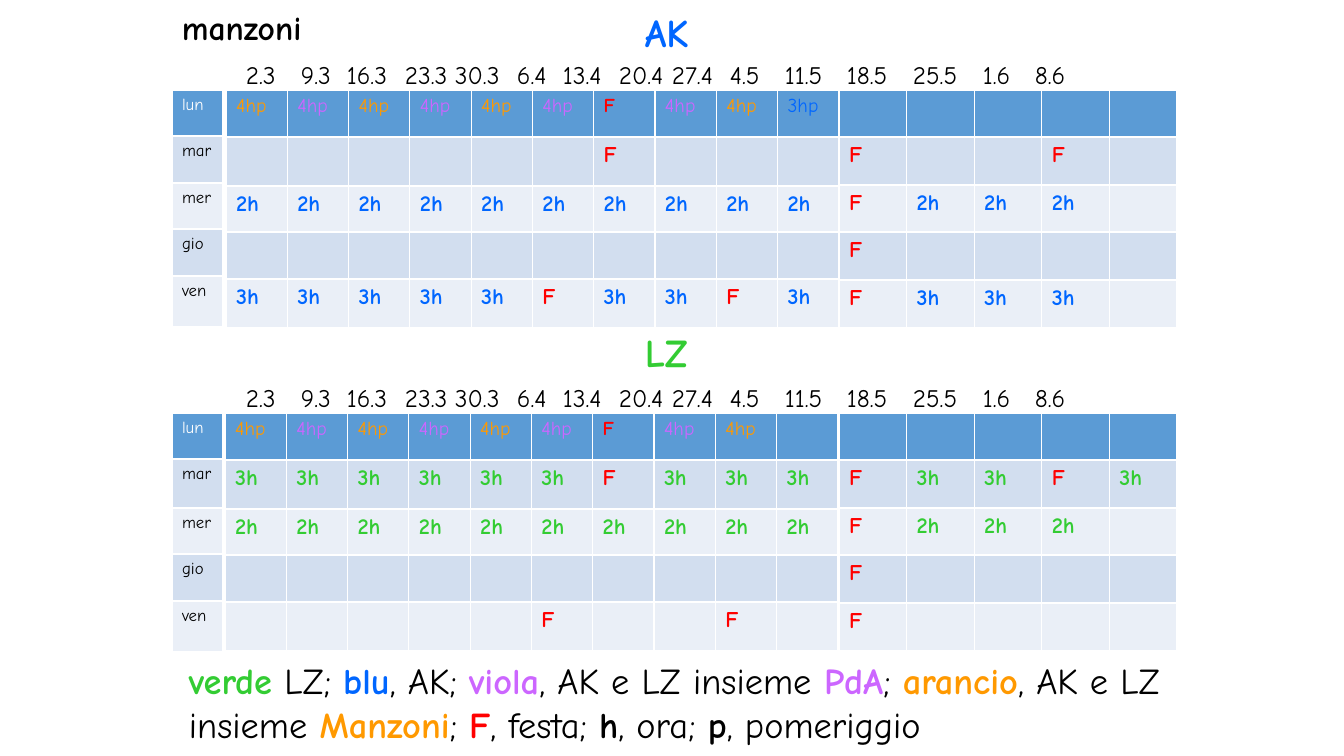
from lxml.etree import SubElement
from pptx import Presentation
from pptx.dml.color import RGBColor
from pptx.enum.text import MSO_AUTO_SIZE
from pptx.oxml.ns import qn
from pptx.util import Pt

# Content
GREEN, BLUE, VIOLET, ORANGE = "33CC33", "0066FF", "CC66FF", "FF9900"
RED, BLACK, WHITE = "FF0000", "000000", "FFFFFF"
HEADER_FILL, BAND_FILLS = "5B9BD5", ("EAEFF7", "D2DEEF")
FONT = "Comic Neue"

DAYS = ["lun", "mar", "mer", "gio", "ven"]
DATES = ["2.3", "9.3", "16.3", "23.3", "30.3", "6.4", "13.4", "20.4",
         "27.4", "4.5", "11.5", "18.5", "25.5", "1.6", "8.6"]
DATE_STOPS = [55, 101, 159, 209, 271, 317, 373, 426, 484, 539, 601, 667, 737, 789]

# Marks: M = Manzoni, P = PdA, F = holiday, "." = free; the rest are class hours
MARKS = {"M": ("4hp", ORANGE), "P": ("4hp", VIOLET), "F": ("F", RED), ".": ("", BLACK)}
CLASSES = [
    {"name": "AK", "colour": BLUE, "title_top": 3, "dates_top": 54, "top": 90,
     "grid_left": 226, "day_rows": [46, 47, 46, 47, 51],
     "hours": ["M P M P M P F P M 3hp . . . . .",
               ". . . . . . F . . . F . . F .",
               "2h 2h 2h 2h 2h 2h 2h 2h 2h 2h F 2h 2h 2h .",
               ". . . . . . . . . . F . . . .",
               "3h 3h 3h 3h 3h F 3h 3h F 3h F 3h 3h 3h ."]},
    {"name": "LZ", "colour": GREEN, "title_top": 323, "dates_top": 377, "top": 413,
     "grid_left": 225, "day_rows": [46, 49, 46, 47, 51],
     "hours": ["M P M P M P F P M . . . . . .",
               "3h 3h 3h 3h 3h 3h F 3h 3h 3h F 3h 3h F 3h",
               "2h 2h 2h 2h 2h 2h 2h 2h 2h 2h F 2h 2h 2h .",
               ". . . . . . . . . . F . . . .",
               ". . . . . F . . F . F . . . ."]},
]
SPRING_COLUMNS = 10
SPRING_ROWS, SUMMER_ROWS = [47, 49, 46, 47, 49], [47, 48, 47, 48, 48]

LEGEND = [("verde", GREEN), (" LZ; ", None), ("blu", BLUE), (", AK; ", None),
          ("viola", VIOLET), (", AK e LZ insieme ", None), ("PdA", VIOLET),
          ("; ", None), ("arancio", ORANGE), (", AK e LZ insieme ", None),
          ("Manzoni", ORANGE), ("; ", None), ("F", RED), (", festa; ", None),
          ("h", BLACK), (", ora; ", None), ("p", BLACK), (", pomeriggio", None)]


# Helpers
def px(length):
    return round(length * 914400 / 100.8)


def rgb(value):
    return RGBColor.from_string(value)


def add_run(paragraph, text, size, colour, bold=False):
    run = paragraph.add_run()
    run.text = text
    for name, value in {"name": FONT, "size": Pt(size), "bold": bold}.items():
        setattr(run.font, name, value)
    run.font.color.rgb = rgb(colour)


def add_text_box(slide, left, top, width, height, wrap=False):
    frame = slide.shapes.add_textbox(px(left), px(top), px(width), px(height)).text_frame
    frame.word_wrap = wrap
    frame.auto_size = MSO_AUTO_SIZE.SHAPE_TO_FIT_TEXT
    return frame.paragraphs[0]


def add_grid(slide, left, top, width, row_heights, cells):
    """Each cell is (text, size, colour, bold)."""
    columns = len(cells[0])
    table = slide.shapes.add_table(len(cells), columns, px(left), px(top),
                                   px(width), px(sum(row_heights))).table
    for column in table.columns:
        column.width = px(width / columns)
    for r, row in enumerate(cells):
        table.rows[r].height = px(row_heights[r])
        for c, (text, size, colour, bold) in enumerate(row):
            cell = table.cell(r, c)
            cell.fill.solid()
            cell.fill.fore_color.rgb = rgb(BAND_FILLS[r % 2] if r else HEADER_FILL)
            if text:
                add_run(cell.text_frame.paragraphs[0], text, size, colour, bold)


def add_dates(slide, top):
    paragraph = add_text_box(slide, 236, top, 938, 40, wrap=True)
    tab_list = SubElement(paragraph._p.get_or_add_pPr(), qn("a:tabLst"))
    for stop in DATE_STOPS:
        SubElement(tab_list, qn("a:tab"), pos=str(px(stop)), algn="l")
    add_run(paragraph, "\t".join(DATES), 18, BLACK)


def add_class(slide, group):
    # Hours, split into the two grids
    cells = []
    for r, line in enumerate(group["hours"]):
        marks = [MARKS.get(mark, (mark, group["colour"])) for mark in line.split()]
        cells.append([(text, 16 if r else 14, colour, r > 0 or text == "F")
                      for text, colour in marks])
    add_grid(slide, group["grid_left"], group["top"], 613, SPRING_ROWS,
             [row[:SPRING_COLUMNS] for row in cells])
    add_grid(slide, 839, group["top"], 338, SUMMER_ROWS,
             [row[SPRING_COLUMNS:] for row in cells])
    # Day names
    days = [[(day, 12, BLACK if r else WHITE, False)] for r, day in enumerate(DAYS)]
    add_grid(slide, 172, group["top"], 51, group["day_rows"], days)
    # Class name and dates
    title = add_text_box(slide, 635, group["title_top"], 72, 57)
    add_run(title, group["name"], 28, group["colour"], True)
    add_dates(slide, group["dates_top"])


def main():
    presentation = Presentation()
    presentation.slide_width, presentation.slide_height = px(1344), px(756)
    slide = presentation.slides.add_slide(presentation.slide_layouts[6])

    for group in CLASSES:
        add_class(slide, group)

    # School name and legend
    add_run(add_text_box(slide, 172, 2, 147, 50), "manzoni", 24, BLACK, True)
    legend = add_text_box(slide, 179, 653, 993, 99, wrap=True)
    for text, colour in LEGEND:
        add_run(legend, text, 26, colour or BLACK, colour is not None)

    presentation.save("out.pptx")


if __name__ == "__main__":
    main()
